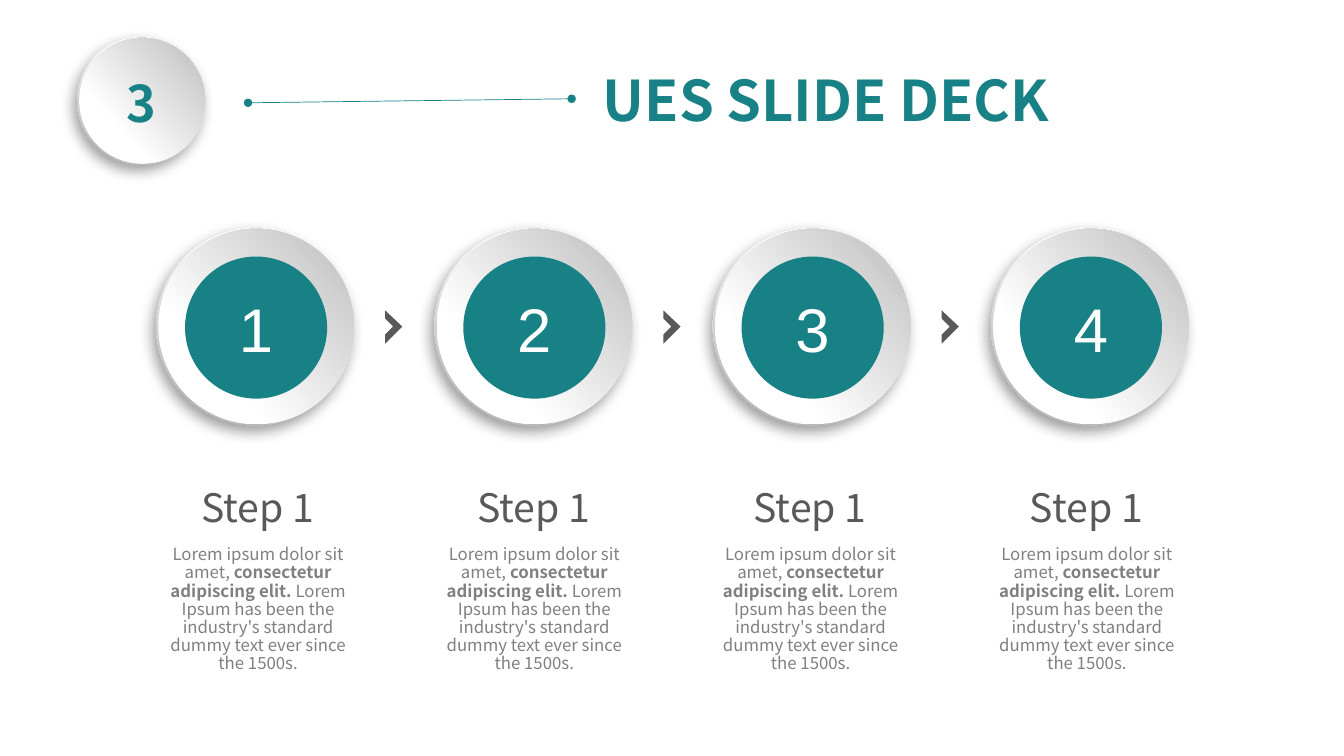
from dataclasses import dataclass
from typing import Any

from lxml import etree
from pptx import Presentation
from pptx.dml.color import RGBColor
from pptx.enum.shapes import MSO_CONNECTOR, MSO_SHAPE
from pptx.enum.text import MSO_ANCHOR, MSO_AUTO_SIZE, PP_ALIGN
from pptx.oxml.ns import qn
from pptx.util import Inches, Pt

OVAL = MSO_SHAPE.OVAL
STRAIGHT = MSO_CONNECTOR.STRAIGHT
LEFT, CENTER = PP_ALIGN.LEFT, PP_ALIGN.CENTER
TOP, MIDDLE = MSO_ANCHOR.TOP, MSO_ANCHOR.MIDDLE
FIT, NO_FIT = MSO_AUTO_SIZE.SHAPE_TO_FIT_TEXT, MSO_AUTO_SIZE.NONE

TEAL = RGBColor(0x18, 0x81, 0x86)
WHITE = RGBColor(0xFF, 0xFF, 0xFF)
SILVER = RGBColor(0xB8, 0xB8, 0xB8)
LIGHT = RGBColor(0xBF, 0xBF, 0xBF)
DARK = RGBColor(0x59, 0x59, 0x59)
GREY = RGBColor(0x80, 0x80, 0x80)

SANS, ARIAL = "Noto Sans CJK SC", "Arial"
DISC_PITCH, TEXT_PITCH = 2.76, 2.74
CHEVRON = [(0, 0), (0.17, 0.16), (0, 0.33), (0, 0.24), (0.08, 0.16), (0, 0.08)]


@dataclass
class Step:
    number: str
    title: str
    body: list[tuple[str, bool]]


BODY = [
    ("Lorem ipsum dolor sit amet, ", False),
    ("consectetur adipiscing elit. ", True),
    ("Lorem Ipsum has been the industry's standard dummy text ever since the 1500s.", False),
]
STEPS = [Step(number, "Step 1", BODY) for number in "1234"]


def write(tf: Any, runs: list[tuple[str, bool]], *, size: float, color: RGBColor,
          font: str = SANS, align: Any = CENTER, anchor: Any = TOP, wrap: bool = True,
          fit: Any = FIT, spacing: float = 1.0) -> None:
    """Fill a text frame with one paragraph of (text, bold) runs."""
    tf.word_wrap = wrap
    tf.auto_size = fit
    tf.vertical_anchor = anchor
    p = tf.paragraphs[0]
    p.alignment = align
    p.line_spacing = spacing
    for text, bold in runs:
        r = p.add_run()
        r.text = text
        r.font.name = font
        r.font.size = Pt(size)
        r.font.bold = bold
        r.font.color.rgb = color


def text_frame(s: Any, x: float, y: float, w: float, h: float) -> Any:
    return s.shapes.add_textbox(Inches(x), Inches(y), Inches(w), Inches(h)).text_frame


def circle(s: Any, cx: float, cy: float, d: float) -> Any:
    sp = s.shapes.add_shape(OVAL, Inches(cx - d / 2), Inches(cy - d / 2), Inches(d), Inches(d))
    sp.shadow.inherit = False
    sp.line.fill.background()
    return sp


def shade(sp: Any, stops: list[tuple[float, RGBColor]], angle: float) -> None:
    sp.fill.gradient()
    sp.fill.gradient_angle = angle
    for stop, (position, color) in zip(sp.fill.gradient_stops, stops):
        stop.position = position
        stop.color.rgb = color


def cast_shadow(sp: Any) -> None:
    effects = sp._element.spPr.find(qn("a:effectLst"))
    shadow = etree.SubElement(effects, qn("a:outerShdw"), blurRad=str(Pt(10)), dist=str(Pt(5)),
                              dir=str(123 * 60000), algn="ctr", rotWithShape="0")
    black = etree.SubElement(shadow, qn("a:srgbClr"), val="000000")
    etree.SubElement(black, qn("a:alpha"), val="39000")


def raised_disc(s: Any, cx: float, cy: float, d: float) -> None:
    """Draw a shadowed rim with a slightly smaller shaded face on it."""
    rim = circle(s, cx, cy, d)
    shade(rim, [(0.17, WHITE), (0.88, SILVER)], 253)
    cast_shadow(rim)
    face = circle(s, cx + 0.01, cy, d - 0.02)
    shade(face, [(0.29, WHITE), (0.98, LIGHT)], 42)


def chevron(s: Any, x: float, y: float) -> None:
    points = [(Inches(x + dx), Inches(y + dy)) for dx, dy in CHEVRON]
    builder = s.shapes.build_freeform(*points[0])
    builder.add_line_segments(points[1:], close=True)
    sp = builder.convert_to_shape()
    sp.shadow.inherit = False
    sp.fill.solid()
    sp.fill.fore_color.rgb = DARK
    sp.line.fill.background()


def dotted_end_line(s: Any, x1: float, y1: float, x2: float, y2: float) -> None:
    cn = s.shapes.add_connector(STRAIGHT, Inches(x1), Inches(y1), Inches(x2), Inches(y2))
    cn.line.color.rgb = TEAL
    cn.line.width = Pt(0.5)
    ln = cn.line._get_or_add_ln()
    for end in ("a:headEnd", "a:tailEnd"):
        etree.SubElement(ln, qn(end), type="oval")
    etree.SubElement(cn._element.spPr, qn("a:effectLst"))


def draw_step(s: Any, i: int, step: Step) -> None:
    # Numbered disc
    cx = 2.53 + i * DISC_PITCH
    raised_disc(s, cx, 3.24, 1.96)
    hub = circle(s, cx + 0.01, 3.25, 1.41)
    hub.fill.solid()
    hub.fill.fore_color.rgb = TEAL
    write(hub.text_frame, [(step.number, False)], size=44, color=WHITE, font=ARIAL,
          anchor=MIDDLE, fit=NO_FIT)

    # Chevron towards the next disc
    if i < len(STEPS) - 1:
        chevron(s, 3.82 + i * DISC_PITCH, 3.08)

    # Description and heading
    shift = i * TEXT_PITCH
    write(text_frame(s, 1.57 + shift, 5.37, 1.98, 1.06), step.body, size=12, color=GREY,
          fit=NO_FIT, spacing=0.9)
    tf = text_frame(s, 1.03 + shift, 4.72, 3.05, 0.61)
    tf.margin_left = tf.margin_right = Inches(0.13)
    tf.margin_top = tf.margin_bottom = Inches(0.07)
    write(tf, [(step.title, False)], size=28, color=DARK, anchor=MIDDLE)


def main() -> None:
    prs = Presentation()
    prs.slide_width, prs.slide_height = Inches(13.33), Inches(7.5)
    s = prs.slides.add_slide(prs.slide_layouts[6])

    # Header: badge, line and title
    raised_disc(s, 1.4, 1.0, 1.27)
    write(text_frame(s, 0.74, 0.67, 1.32, 0.71), [("3", True)], size=36, color=TEAL)
    dotted_end_line(s, 2.46, 1.02, 5.67, 0.98)
    write(text_frame(s, 5.88, 0.6, 5.45, 0.77), [("UES SLIDE DECK", True)], size=40,
          color=TEAL, align=LEFT, wrap=False)

    # Steps
    for i, step in enumerate(STEPS):
        draw_step(s, i, step)

    prs.save("out.pptx")


if __name__ == "__main__":
    main()
